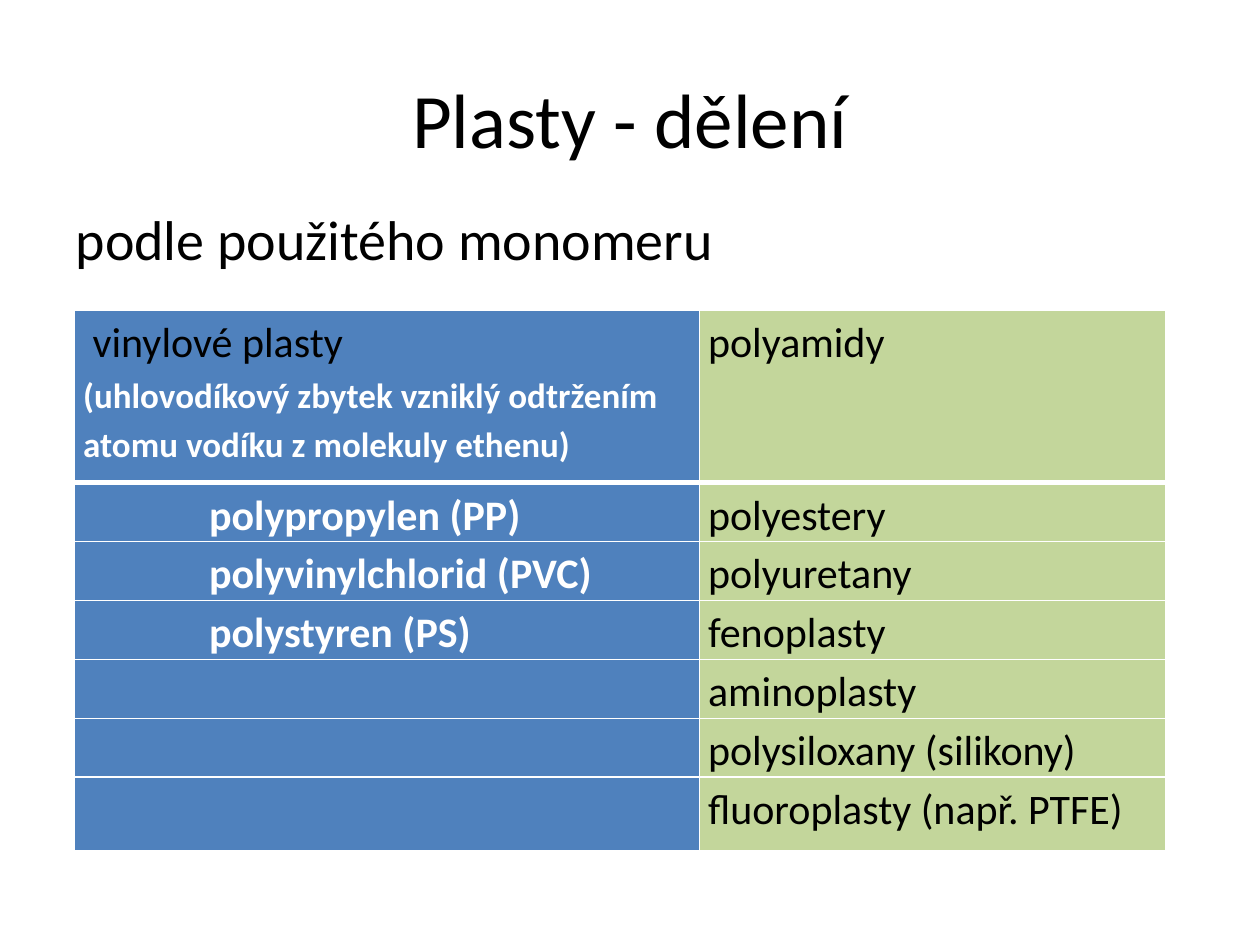
from dataclasses import dataclass

from lxml import etree
from pptx import Presentation
from pptx.dml.color import RGBColor
from pptx.enum.text import MSO_ANCHOR, PP_ALIGN
from pptx.oxml.ns import qn
from pptx.util import Inches, Pt

CENTER, MIDDLE = PP_ALIGN.CENTER, MSO_ANCHOR.MIDDLE
WIDTH, HEIGHT = Inches(10), Inches(7.5)


@dataclass(frozen=True)
class Theme:
    font: str = "Calibri"
    black: str = "000000"
    white: str = "FFFFFF"
    blue: str = "4F81BD"
    green: str = "C3D69B"
    title: int = 44
    body: int = 32
    cell: int = 24
    note: int = 20


THEME = Theme()
COLUMNS = (4.96, 3.7)
ROWS = (1.37, *[0.28] * 5, 0.58)
VINYL = ("polypropylen (PP)", "polyvinylchlorid (PVC)", "polystyren (PS)")
OTHERS = ("polyamidy", "polyestery", "polyuretany", "fenoplasty", "aminoplasty",
          "polysiloxany (silikony)", "fluoroplasty (např. PTFE)")


def add_run(p, text, size, color=THEME.black, bold=False):
    r = p.add_run()
    r.text = text
    formats = {"name": THEME.font, "size": Pt(size), "bold": bold}
    for name, value in formats.items():
        setattr(r.font, name, value)
    r.font.color.rgb = RGBColor.from_string(color)


def fill_placeholder(sp, text, size, box):
    """Place a placeholder by shares of the slide and return its paragraph."""
    x, y, w, h = box
    sp.left, sp.top = int(WIDTH * x), int(HEIGHT * y)
    sp.width, sp.height = int(WIDTH * w), int(HEIGHT * h)
    p = sp.text_frame.paragraphs[0]
    p.space_before = Pt(0)
    add_run(p, text, size)
    return p


def remove_bullet(p):
    pPr = p._p.get_or_add_pPr()
    pPr.set("marL", "0")
    pPr.set("indent", "0")
    etree.SubElement(pPr, qn("a:buNone"))


def style_cell(cell, color, bottom):
    """White borders, then fill and margins."""
    tcPr = cell._tc.get_or_add_tcPr()
    for side, width in {"L": 1, "R": 1, "T": 1, "B": bottom}.items():
        ln = etree.SubElement(tcPr, qn(f"a:ln{side}"), w=str(Pt(width)))
        line_fill = etree.SubElement(ln, qn("a:solidFill"))
        etree.SubElement(line_fill, qn("a:srgbClr"), val=THEME.white)
    cell.fill.solid()
    cell.fill.fore_color.rgb = RGBColor.from_string(color)
    margins = {"margin_left": 0.07, "margin_right": 0.07,
               "margin_top": 0, "margin_bottom": 0}
    for name, value in margins.items():
        setattr(cell, name, Inches(value))


def cell_paragraph(p, indent=0, after=0):
    p.line_spacing = 1.15
    p.space_after = Pt(after)
    if indent:
        p._p.get_or_add_pPr().set("marL", str(Inches(indent)))
    return p


def add_plastics_table(s):
    frame = s.shapes.add_table(len(ROWS), len(COLUMNS), Inches(0.59), Inches(2.46),
                               Inches(sum(COLUMNS)), Inches(sum(ROWS)))
    table = frame.table
    table.first_row = table.horz_banding = False
    for column, width in zip(table.columns, COLUMNS):
        column.width = Inches(width)
    for i, height in enumerate(ROWS):
        table.rows[i].height = Inches(height)
        for j, color in enumerate((THEME.blue, THEME.green)):
            style_cell(table.cell(i, j), color, bottom=3 if i == 0 else 1)

    # Heading of the vinyl group
    tf = table.cell(0, 0).text_frame
    p = cell_paragraph(tf.paragraphs[0])
    add_run(p, " ", THEME.cell, THEME.white, True)
    add_run(p, "vinylové plasty", THEME.cell)
    add_run(cell_paragraph(tf.add_paragraph()),
            "(uhlovodíkový zbytek vzniklý odtržením atomu vodíku z molekuly ethenu)",
            THEME.note, THEME.white, True)

    # Members of the vinyl group and the other plastics
    for i, text in enumerate(VINYL, 1):
        p = cell_paragraph(table.cell(i, 0).text_frame.paragraphs[0], indent=1)
        add_run(p, text, THEME.cell, THEME.white, True)
    for i, text in enumerate(OTHERS):
        p = cell_paragraph(table.cell(i, 1).text_frame.paragraphs[0],
                           after=0 if i == 1 else 10)
        add_run(p, text, THEME.cell)


def main():
    prs = Presentation()
    prs.slide_width, prs.slide_height = WIDTH, HEIGHT
    s = prs.slides.add_slide(prs.slide_layouts[1])

    # Title and subtitle
    title, body = s.placeholders
    p = fill_placeholder(title, "Plasty - dělení", THEME.title, (0.05, 0.04, 0.9, 0.17))
    p.alignment = CENTER
    title.text_frame.vertical_anchor = MIDDLE
    p = fill_placeholder(body, "podle použitého monomeru", THEME.body,
                         (0.05, 0.21, 0.9, 0.7))
    remove_bullet(p)

    add_plastics_table(s)
    prs.save("out.pptx")


if __name__ == "__main__":
    main()
